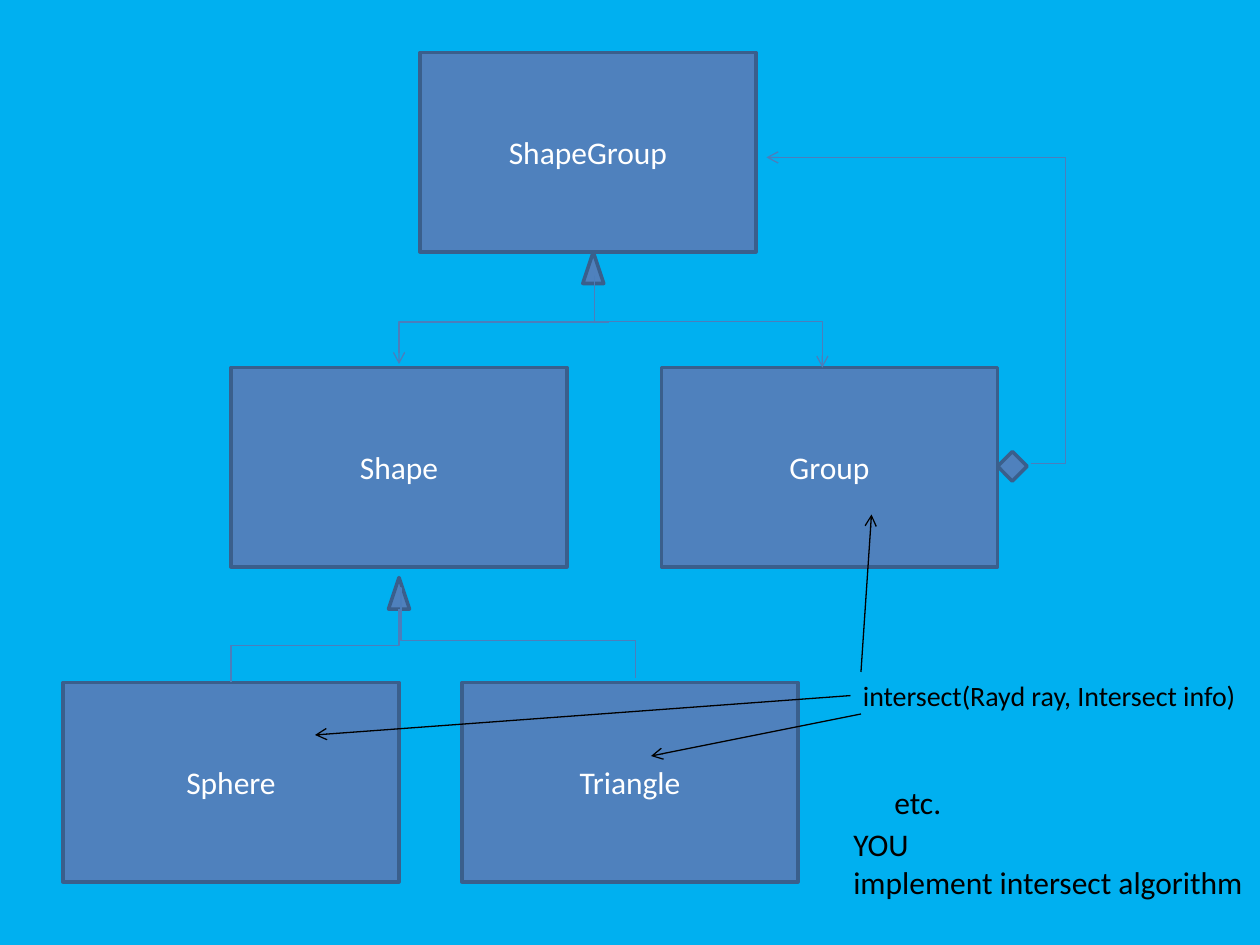
"""Build a class diagram of shapes, groups and their intersect method."""
from lxml import etree
from pptx import Presentation
from pptx.dml.color import RGBColor
from pptx.enum.shapes import MSO_CONNECTOR, MSO_SHAPE
from pptx.enum.text import MSO_ANCHOR, MSO_AUTO_SIZE, PP_ALIGN
from pptx.oxml.ns import qn
from pptx.util import Pt

RECT, TRI = MSO_SHAPE.RECTANGLE, MSO_SHAPE.ISOSCELES_TRIANGLE
LINE, ELBOW = MSO_CONNECTOR.STRAIGHT, MSO_CONNECTOR.ELBOW
MIDDLE, CENTER = MSO_ANCHOR.MIDDLE, PP_ALIGN.CENTER
GROW = MSO_AUTO_SIZE.SHAPE_TO_FIT_TEXT
HEX = {"back": "00B0F0", "fill": "4F81BD", "edge": "3A5F8C",
       "wire": "4B7EBC", "white": "FFFFFF", "black": "000000"}
RGB = {name: RGBColor.from_string(code) for name, code in HEX.items()}

deck = Presentation()
deck.slide_width, deck.slide_height = Pt(720), Pt(540)
slide = deck.slides.add_slide(deck.slide_layouts[6])
slide.background.fill.solid()
slide.background.fill.fore_color.rgb = RGB["back"]
shapes = slide.shapes


def style(frame, size, color):
    for para in frame.paragraphs:
        for run in para.runs:
            run.font.name, run.font.size = "Calibri", Pt(size)
            run.font.color.rgb = RGB[color]


def wire(kind, ends, color, arrow):
    link = shapes.add_connector(kind, *map(Pt, ends))
    link.line.color.rgb, link.line.width = RGB[color], Pt(0.75)
    props = link._element.spPr
    if arrow:
        etree.SubElement(props.find(qn("a:ln")), qn("a:tailEnd"), type="arrow")
    etree.SubElement(props, qn("a:effectLst"))
    return props


nodes = [
    (RECT, 240, 30, 192, 114, 0, "ShapeGroup"),
    (RECT, 378, 210, 192, 114, 0, "Group"),
    (RECT, 132, 210, 192, 114, 0, "Shape"),
    (RECT, 264, 390, 192, 114, 0, "Triangle"),
    (RECT, 36, 390, 192, 114, 0, "Sphere"),
    (RECT, 572.5, 260.5, 12, 12, 45, ""),
    (TRI, 333, 144, 12, 18, 0, ""),
    (TRI, 222, 330, 12, 18, 0, ""),
]
for kind, left, top, width, height, turn, label in nodes:
    node = shapes.add_shape(kind, Pt(left), Pt(top), Pt(width), Pt(height))
    node.shadow.inherit = False
    node.rotation = turn
    node.fill.solid()
    node.fill.fore_color.rgb = RGB["fill"]
    node.line.color.rgb, node.line.width = RGB["edge"], Pt(2)
    if label:
        frame = node.text_frame
        frame.text = label
        frame.vertical_anchor = MIDDLE
        frame.paragraphs[0].alignment = CENTER
        style(frame, 18, "white")

elbows = [
    ((228, 208, 348, 184), 180, "bentConnector2", [], True),
    ((431, 118.75, 378.5, 249), 270, "bentConnector3", [50000], True),
    ((589, 265, 438, 90), 0, "bentConnector3", [-13100], True),
    ((201, 417, 159, 321), 90, "bentConnector3", [50000], False),
    ((363, 387.25, 228, 336), 180, "bentConnector4", [800, 58800], False),
]
for ends, turn, preset, bends, arrow in elbows:
    props = wire(ELBOW, ends, "wire", arrow)
    props.find(qn("a:xfrm")).set("rot", str(turn * 60000))
    geom = props.find(qn("a:prstGeom"))
    geom.set("prst", preset)
    guides = geom.find(qn("a:avLst"))
    for num, bend in enumerate(bends, 1):
        etree.SubElement(guides, qn("a:gd"), name=f"adj{num}", fmla=f"val {bend}")

notes = [
    (504, 444, 42, 29, 18, "etc."),
    (486, 384, 230.5, 26.5, 16, "intersect(Rayd ray, Intersect info)"),
    (480.5, 468, 240, 51, 18, "YOU\nimplement intersect algorithm"),
]
for left, top, width, height, size, words in notes:
    box = shapes.add_textbox(Pt(left), Pt(top), Pt(width), Pt(height))
    frame = box.text_frame
    frame.text = words
    frame.word_wrap, frame.auto_size = False, GROW
    style(frame, size, "black")

for ends in [(492, 384, 498, 294), (492, 408, 372, 432), (486, 397.5, 180, 420)]:
    wire(LINE, ends, "black", True)

deck.save("out.pptx")
